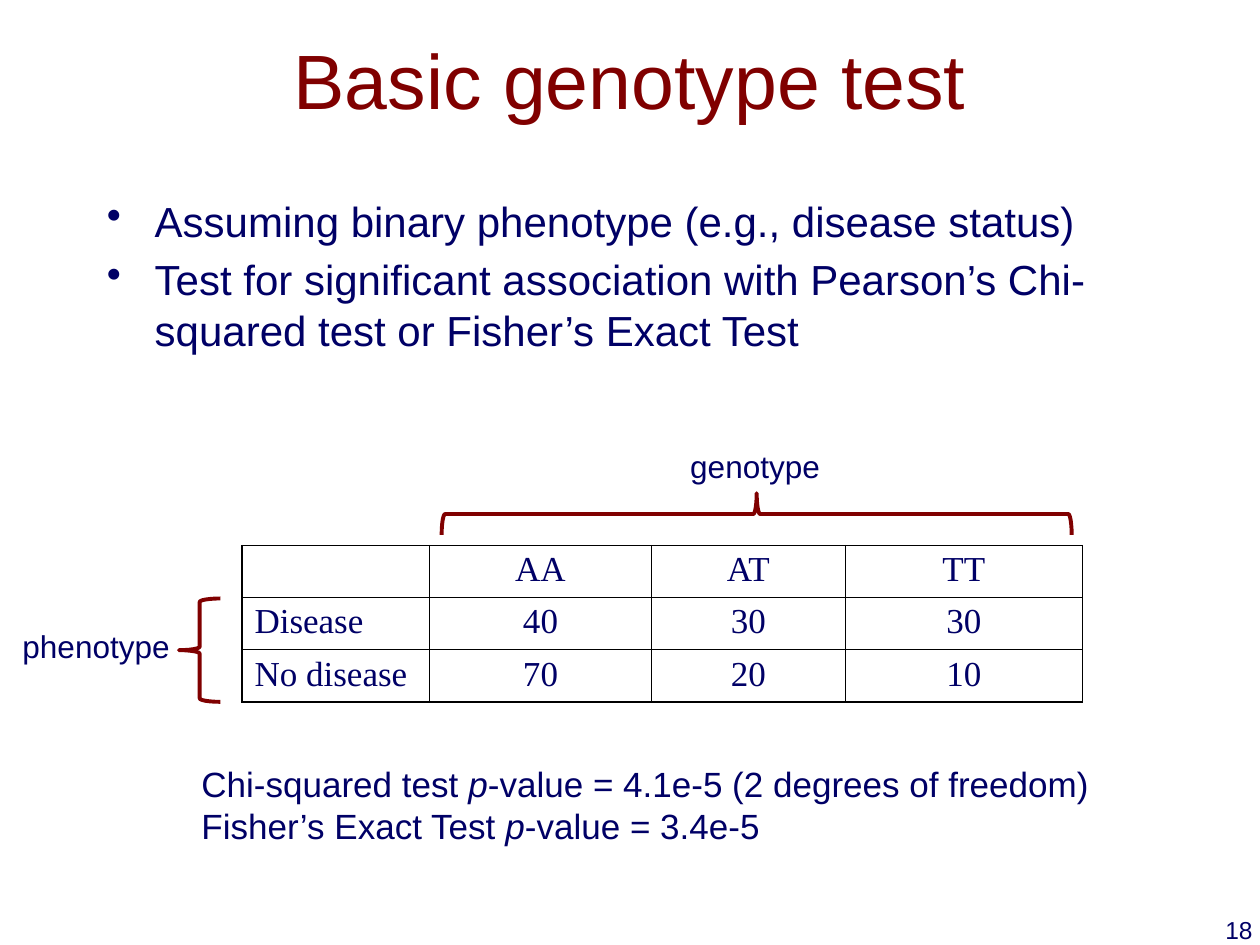
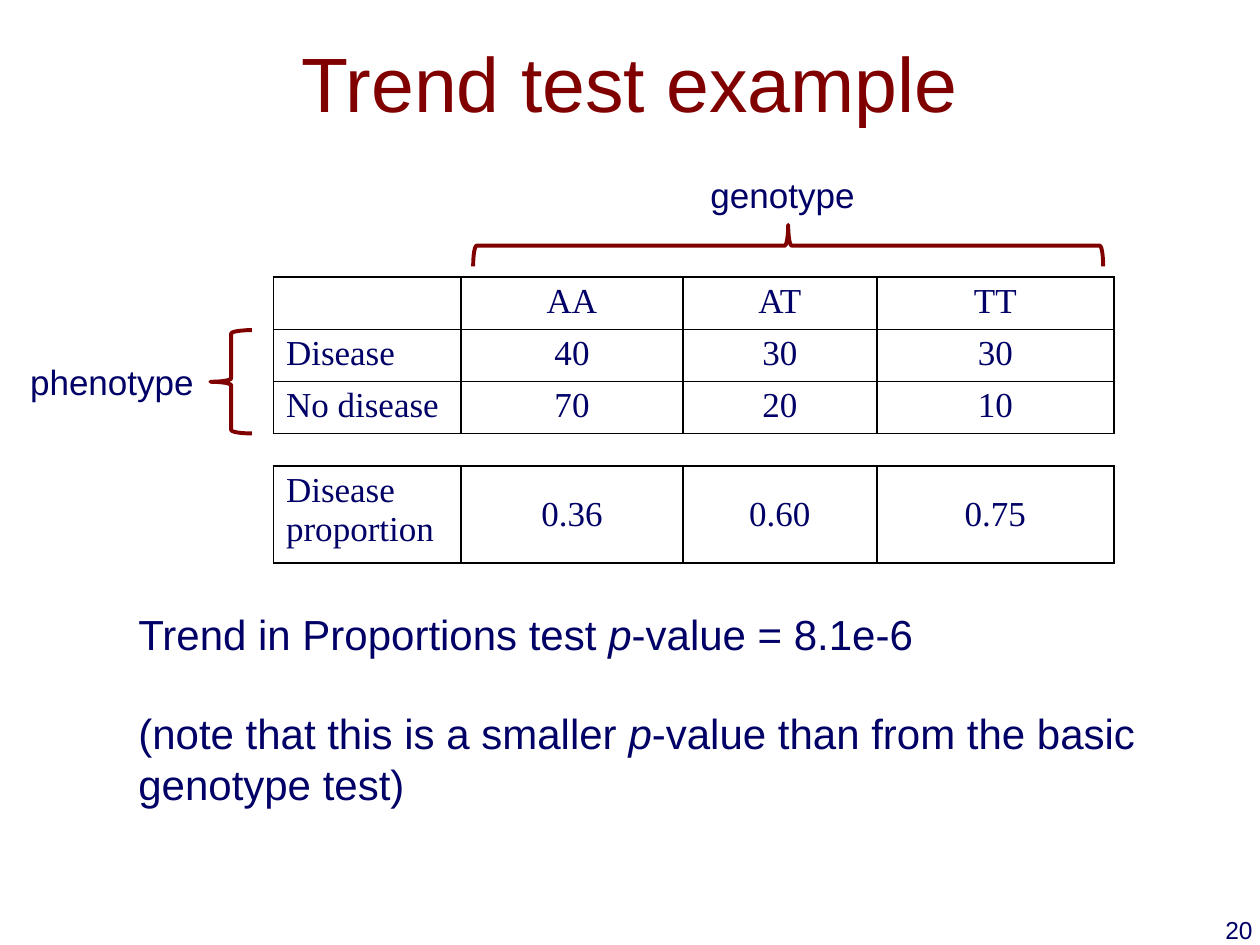
from lxml import etree
from pptx import Presentation
from pptx.dml.color import RGBColor
from pptx.enum import shapes, text
from pptx.oxml import ns
from pptx.util import Inches, Pt

MAROON = RGBColor(0x80, 0x00, 0x00)
NAVY = RGBColor(0x00, 0x00, 0x66)
BORDER = RGBColor(0x00, 0x00, 0x00)
SANS, SERIF = "Arial", "Times New Roman"

# Content: runs marked (text, True) are italic
COUNTS = [
    ["", "AA", "AT", "TT"],
    ["Disease", "40", "30", "30"],
    ["No disease", "70", "20", "10"],
]
PROPORTIONS = [["Disease proportion", "0.36", "0.60", "0.75"]]
ASSUMPTIONS = [
    ["Assuming binary phenotype (e.g., disease status)"],
    ["Test for significant association with Pearson’s Chi-squared test or Fisher’s Exact Test"],
]
GENOTYPE_RESULTS = [
    ["Chi-squared test ", ("p", True), "-value = 4.1e-5 (2 degrees of freedom)"],
    ["Fisher’s Exact Test ", ("p", True), "-value = 3.4e-5"],
]
TREND_RESULTS = [
    ["Trend in Proportions test ", ("p", True), "-value = 8.1e-6"],
    ["(note that this is a smaller ", ("p", True),
     "-value than from the basic genotype test)"],
]

COLUMN_WIDTHS = [1.49, 1.76, 1.54, 1.88]
ROW_HEIGHT = 0.41
BRACE_DEPTH = 0.33
GENOTYPE_SPAN = 5


def style(paragraph, size, font=SANS, color=NAVY, align=text.PP_ALIGN.LEFT):
    paragraph.font.size = Pt(size)
    paragraph.font.name = font
    paragraph.font.color.rgb = color
    paragraph.alignment = align


def add_text(slide, box, paragraphs, size, wrap=True, align=text.PP_ALIGN.LEFT, gap=0):
    """Add a text box; gap is the space between paragraphs in points."""
    shape = slide.shapes.add_textbox(*map(Inches, box))
    frame = shape.text_frame
    frame.word_wrap = wrap
    for index, runs in enumerate(paragraphs):
        paragraph = frame.add_paragraph() if index else frame.paragraphs[0]
        style(paragraph, size, align=align)
        if index:
            paragraph.space_before = Pt(gap)
        for item in runs:
            words, italic = item if isinstance(item, tuple) else (item, False)
            run = paragraph.add_run()
            run.text = words
            if italic:
                run.font.italic = True
    return shape


def add_bullets(shape, indent=0.38):
    for paragraph in shape.text_frame.paragraphs:
        paragraph.space_before = Pt(4.8)
        properties = paragraph._p.get_or_add_pPr()
        properties.set("marL", str(Inches(indent)))
        properties.set("indent", str(-Inches(indent)))
        bullet = etree.Element(ns.qn("a:buChar"), char="•")
        properties.find(ns.qn("a:defRPr")).addprevious(bullet)


def set_borders(cell):
    properties = cell._tc.get_or_add_tcPr()
    for index, side in enumerate(("lnL", "lnR", "lnT", "lnB")):
        line = etree.Element(ns.qn("a:" + side), w=str(Pt(1)))
        fill = etree.SubElement(line, ns.qn("a:solidFill"))
        etree.SubElement(fill, ns.qn("a:srgbClr"), val=str(BORDER))
        properties.insert(index, line)


def add_grid(slide, left, top, rows, row_height=ROW_HEIGHT, anchor=text.MSO_ANCHOR.TOP):
    frame = slide.shapes.add_table(
        len(rows), len(COLUMN_WIDTHS), Inches(left), Inches(top),
        Inches(sum(COLUMN_WIDTHS)), Inches(row_height * len(rows)))
    table = frame.table
    table.first_row = table.horz_banding = False
    for column, width in zip(table.columns, COLUMN_WIDTHS):
        column.width = Inches(width)
    for row_index, values in enumerate(rows):
        table.rows[row_index].height = Inches(row_height)
        for column_index, value in enumerate(values):
            cell = table.cell(row_index, column_index)
            cell.text = value
            cell.margin_top = cell.margin_bottom = Inches(0.04)
            is_label = column_index == 0
            cell.vertical_anchor = text.MSO_ANCHOR.TOP if is_label else anchor
            align = text.PP_ALIGN.LEFT if is_label else text.PP_ALIGN.CENTER
            style(cell.text_frame.paragraphs[0], 20, SERIF, align=align)
            cell.fill.background()
            set_borders(cell)


def add_brace(slide, left, top, length, rotation=0):
    brace = slide.shapes.add_shape(
        shapes.MSO_SHAPE.LEFT_BRACE, Inches(left), Inches(top),
        Inches(BRACE_DEPTH), Inches(length))
    brace.rotation = rotation
    brace.shadow.inherit = False
    brace.fill.background()
    brace.line.color.rgb = MAROON
    brace.line.width = Pt(2.25)


def add_contingency(slide, left, top, phenotype_box, genotype_box, label_size):
    """Add the counts table with a brace and label on each axis."""
    add_grid(slide, left, top, COUNTS)
    add_brace(slide, left - 0.5, top + 0.42, 2 * ROW_HEIGHT)
    add_brace(slide, left + 3.92, top - 0.25 - GENOTYPE_SPAN / 2, GENOTYPE_SPAN, 90)
    add_text(slide, phenotype_box, [["phenotype"]], label_size, wrap=False)
    add_text(slide, genotype_box, [["genotype"]], label_size, wrap=False)


def add_slide(presentation, title_text, title_top, number):
    slide = presentation.slides.add_slide(presentation.slide_layouts[5])
    title = slide.shapes.title
    title.left, title.top = Inches(0.75), Inches(title_top)
    title.width, title.height = Inches(8.5), Inches(1.25)
    title.text_frame.text = title_text
    title.text_frame.vertical_anchor = text.MSO_ANCHOR.MIDDLE
    style(title.text_frame.paragraphs[0], 44, color=MAROON, align=text.PP_ALIGN.CENTER)
    add_text(slide, (7.96, 7.21, 2.08, 0.5), [[number]], 14, align=text.PP_ALIGN.RIGHT)
    return slide


def main():
    presentation = Presentation()
    presentation.slide_width, presentation.slide_height = Inches(10), Inches(7.5)

    # Basic genotype test
    slide = add_slide(presentation, "Basic genotype test", 0, "18")
    add_bullets(add_text(slide, (0.75, 1.5, 8.5, 5.5), ASSUMPTIONS, 24))
    add_contingency(slide, 1.92, 4.33, (0.08, 4.93, 1.38, 0.4), (5.38, 3.5, 1.24, 0.4), 18)
    add_text(slide, (1.5, 6, 7.29, 0.77), GENOTYPE_RESULTS, 20, wrap=False)

    # Trend test example
    slide = add_slide(presentation, "Trend test example", 0.02, "20")
    add_contingency(slide, 2.17, 2.2, (0.14, 2.81, 1.51, 0.44), (5.54, 1.33, 1.36, 0.44), 20)
    add_grid(slide, 2.17, 3.7, PROPORTIONS, 0.77, text.MSO_ANCHOR.MIDDLE)
    add_text(slide, (1, 4.78, 8.33, 1.72), TREND_RESULTS, 24, gap=28)

    presentation.save("out.pptx")


if __name__ == "__main__":
    main()
